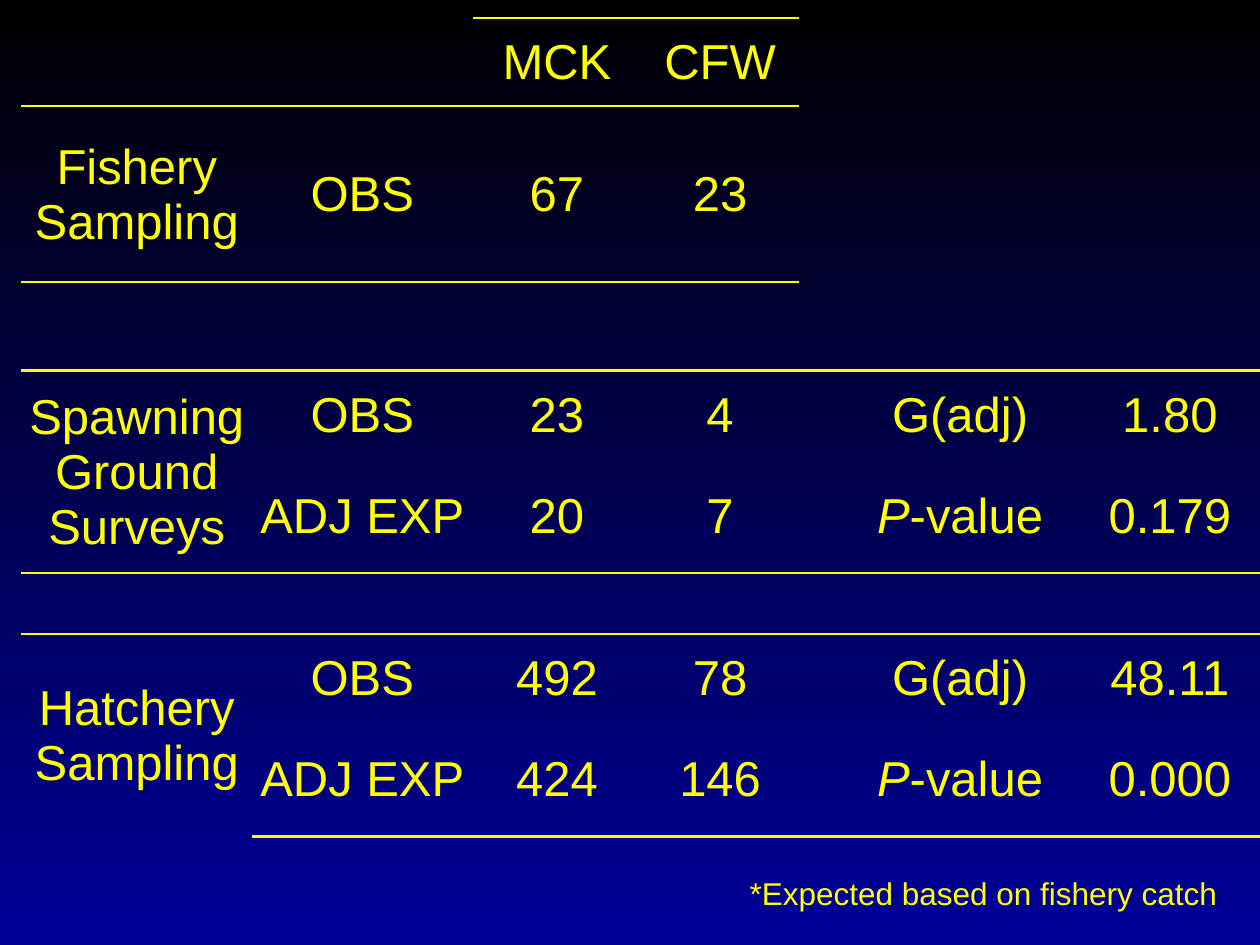
from lxml.etree import SubElement
from pptx import Presentation
from pptx.dml.color import RGBColor
from pptx.enum.text import MSO_ANCHOR, PP_ALIGN
from pptx.oxml.ns import qn
from pptx.util import Inches, Pt

YELLOW = "FFFF00"
COLUMN_WIDTHS = [1.83, 1.75, 1.34, 1.25, 0.39, 1.78, 1.55]
ROW_HEIGHTS = [0.7, 0.7, 0.7, 0.7, 0.7, 0.91, 0.48, 0.7, 0.91]
P_VALUE = "P|-value"  # the part before the bar is italic
ROWS = [
    ["", "", "MCK", "CFW", "", "", ""],
    ["Fishery Sampling", "OBS", "67", "23", "", "", ""],
    [""] * 7,
    [""] * 7,
    ["Spawning Ground Surveys", "OBS", "23", "4", "", "G(adj)", "1.80"],
    ["", "ADJ EXP", "20", "7", "", P_VALUE, "0.179"],
    [""] * 7,
    ["Hatchery Sampling", "OBS", "492", "78", "", "G(adj)", "48.11"],
    ["", "ADJ EXP", "424", "146", "", P_VALUE, "0.000"],
]
# Each two-row merge is given by its top cell (row, column).
TALL_CELLS = [(1, 0), (1, 1), (1, 2), (1, 3), (4, 0), (7, 0)]
# Row boundary -> columns that carry a rule there.
RULES = {0: range(2, 4), 1: range(4), 3: range(4),
         4: range(7), 6: range(7), 7: range(7), 9: range(7)}


def color(hex_text):
    return RGBColor.from_string(hex_text)


def write(paragraph, text, size=28, font="Arial", hex_color=YELLOW, italic=None):
    paragraph.alignment = PP_ALIGN.CENTER
    run = paragraph.add_run()
    run.text = text
    run.font.size = Pt(size)
    run.font.name = font
    run.font.italic = italic
    run.font.color.rgb = color(hex_color)


class SlideBuilder:
    def __init__(self, slide, rule_color=YELLOW, rule_width=1.5):
        self.slide = slide
        self.rule_color = rule_color
        self.rule_width = rule_width

    def background(self, top, bottom):
        fill = self.slide.background.fill
        fill.gradient()
        fill.gradient_angle = 270
        for stop, position, hex_color in zip(fill.gradient_stops, (0, 1), (top, bottom)):
            stop.position = position
            stop.color.rgb = color(hex_color)

    def note(self, text, left, top, width, height):
        box = self.slide.shapes.add_textbox(
            Inches(left), Inches(top), Inches(width), Inches(height))
        box.text_frame.word_wrap = False
        write(box.text_frame.paragraphs[0], text, size=18)

    def border(self, cell, side, visible):
        line = SubElement(cell._tc.get_or_add_tcPr(), qn(f"a:ln{side}"))
        line.set("w", str(Pt(self.rule_width)))
        if visible:
            fill = SubElement(line, qn("a:solidFill"))
            SubElement(fill, qn("a:srgbClr")).set("val", self.rule_color)
        else:
            SubElement(line, qn("a:noFill"))

    def cell(self, cell, text, rule_above, rule_below):
        for side, visible in zip("LRTB", (False, False, rule_above, rule_below)):
            self.border(cell, side, visible)
        cell.fill.background()
        if not text:
            return
        cell.vertical_anchor = MSO_ANCHOR.MIDDLE
        cell.margin_left = cell.margin_right = cell.margin_top = Inches(0.01)
        cell.margin_bottom = 0
        paragraph = cell.text_frame.paragraphs[0]
        italic_part, _, rest = text.rpartition("|")
        if italic_part:
            write(paragraph, italic_part, italic=True)
        write(paragraph, rest, italic=False)

    def table(self, left, top):
        frame = self.slide.shapes.add_table(
            len(ROWS), len(COLUMN_WIDTHS), Inches(left), Inches(top),
            Inches(sum(COLUMN_WIDTHS)), Inches(sum(ROW_HEIGHTS)))
        table = frame.table
        table.first_row = table.horz_banding = False
        for column, width in zip(table.columns, COLUMN_WIDTHS):
            column.width = Inches(width)
        for row, height in zip(table.rows, ROW_HEIGHTS):
            row.height = Inches(height)
        for i, texts in enumerate(ROWS):
            for j, text in enumerate(texts):
                self.cell(table.cell(i, j), text,
                          j in RULES.get(i, ()), j in RULES.get(i + 1, ()))
        for i, j in TALL_CELLS:
            # The top cell of a merge draws the rule below the whole merge.
            top_cell = table.cell(i, j)
            top_cell.merge(table.cell(i + 1, j))


def main():
    presentation = Presentation()
    presentation.slide_width = Inches(10)
    presentation.slide_height = Inches(7.5)
    builder = SlideBuilder(presentation.slides.add_slide(presentation.slide_layouts[6]))
    builder.background("000000", "000099")
    builder.note("*Expected based on fishery catch", 5.83, 6.89, 3.95, 0.4)
    builder.table(0.17, 0.14)
    presentation.save("out.pptx")


if __name__ == "__main__":
    main()
